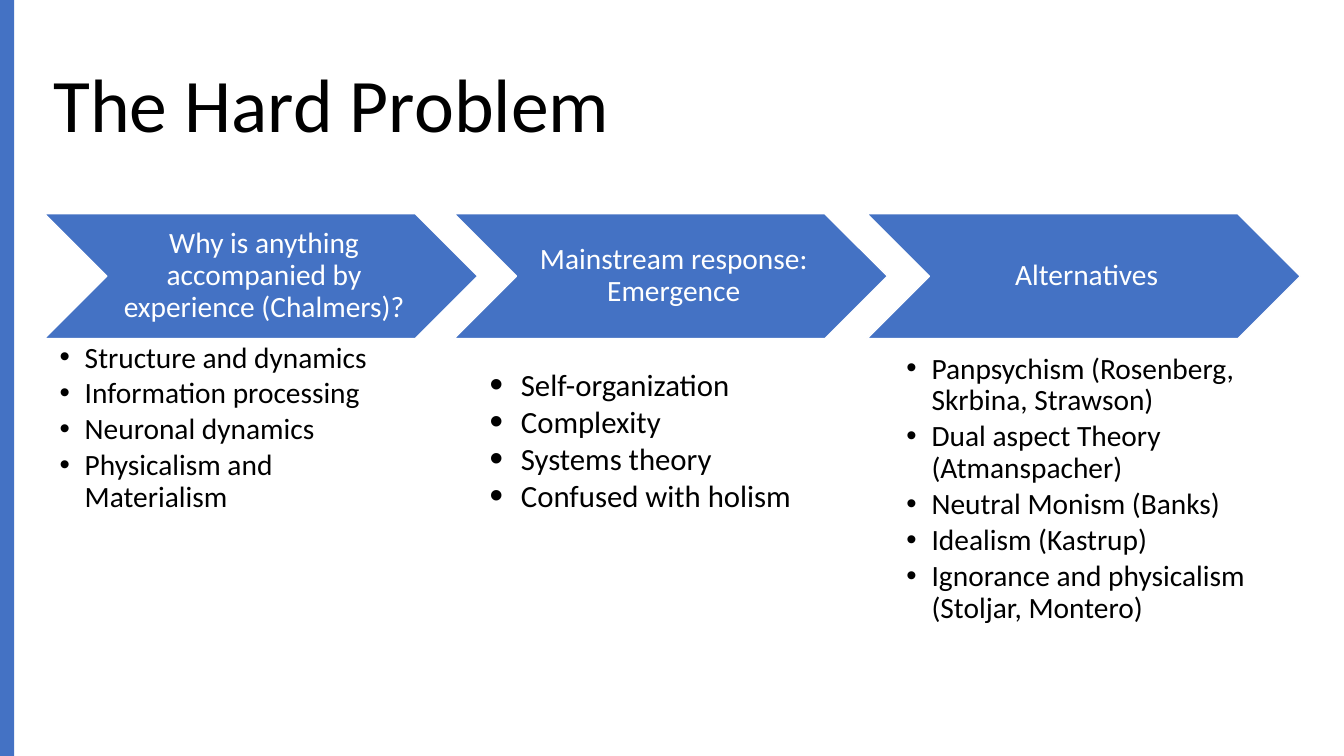
from dataclasses import dataclass

from lxml import etree
from pptx import Presentation
from pptx.dml.color import RGBColor
from pptx.enum import shapes, text
from pptx.oxml.ns import qn
from pptx.util import Inches, Pt

WIDTH, HEIGHT = Inches(13.33), Inches(7.5)
FONT = "Calibri"
BLUE, BLACK, WHITE = "4472C4", "000000", "FFFFFF"


@dataclass
class Box:
    """Left, top, width and height in percent of the slide."""
    left: float
    top: float
    width: float
    height: float

    def lengths(self) -> list[int]:
        return [int(WIDTH * self.left / 100), int(HEIGHT * self.top / 100),
                int(WIDTH * self.width / 100), int(HEIGHT * self.height / 100)]


@dataclass
class ListStyle:
    size: float
    indent: float
    inset: float
    line_spacing: float
    space_after: float
    bullet_percent: int
    wrap: bool


@dataclass
class Column:
    chevron_left: float
    heading: str
    list_box: Box
    style: ListStyle
    items: list[str]


STEP_LIST = ListStyle(21, 0.25, 0, 0.9, 3, 100, True)
FREE_LIST = ListStyle(22, 0.31, 0.1, 1.0, 0, 125, False)

COLUMNS = [
    Column(3.3, "Why is anything accompanied by experience (Chalmers)?",
           Box(4.43, 45.33, 25.8, 41.47), STEP_LIST,
           ["Structure and dynamics", "Information processing",
            "Neuronal dynamics", "Physicalism and Materialism"]),
    Column(33.78, "Mainstream response: Emergence",
           Box(35.7, 47.73, 24.23, 21.07), FREE_LIST,
           ["Self-organization", "Complexity", "Systems theory",
            "Confused with holism"]),
    Column(64.5, "Alternatives",
           Box(67.44, 46.8, 26.33, 41.47), STEP_LIST,
           ["Panpsychism (Rosenberg, Skrbina, Strawson)",
            "Dual aspect Theory (Atmanspacher)", "Neutral Monism (Banks)",
            "Idealism (Kastrup)",
            "Ignorance and physicalism (Stoljar, Montero)"]),
]


def color(value: str) -> RGBColor:
    return RGBColor.from_string(value)


def write(paragraph, words: str, size: float, font_color: str,
          line_spacing: float = 0.9) -> None:
    paragraph.text = words
    paragraph.line_spacing = line_spacing
    paragraph.font.name = FONT
    paragraph.font.size = Pt(size)
    paragraph.font.color.rgb = color(font_color)


def add_bullet(paragraph, style: ListStyle) -> None:
    properties = paragraph._p.get_or_add_pPr()
    indent = Inches(style.indent)
    properties.set("marL", str(indent))
    properties.set("indent", str(-indent))
    # Bullet elements stand before the default run properties
    bullet_parts = [("a:buSzPct", "val", str(style.bullet_percent * 1000)),
                    ("a:buFont", "typeface", "Arial"),
                    ("a:buChar", "char", "•")]
    for tag, name, value in bullet_parts:
        element = etree.Element(qn(tag))
        element.set(name, value)
        properties.find(qn("a:defRPr")).addprevious(element)


def add_filled(slide, kind: shapes.MSO_SHAPE, box: Box):
    shape = slide.shapes.add_shape(kind, *box.lengths())
    shape.shadow.inherit = False
    shape.fill.solid()
    shape.fill.fore_color.rgb = color(BLUE)
    shape.line.fill.background()
    return shape


def add_title(slide, words: str) -> None:
    frame = slide.shapes.add_textbox(
        *Box(3.23, 4.67, 93.62, 19.33).lengths()).text_frame
    frame.word_wrap = True
    frame.vertical_anchor = text.MSO_ANCHOR.MIDDLE
    write(frame.paragraphs[0], words, 54, BLACK)


def add_chevron(slide, column: Column) -> None:
    shape = add_filled(slide, shapes.MSO_SHAPE.CHEVRON,
                       Box(column.chevron_left, 28.27, 32.25, 16.53))
    shape.line.color.rgb = color(WHITE)
    shape.line.width = Pt(1)
    frame = shape.text_frame
    frame.word_wrap = True
    frame.vertical_anchor = text.MSO_ANCHOR.MIDDLE
    frame.margin_left = Inches(0.09)
    frame.margin_right = frame.margin_top = frame.margin_bottom = Inches(0.03)
    paragraph = frame.paragraphs[0]
    paragraph.alignment = text.PP_ALIGN.CENTER
    write(paragraph, column.heading, 21, WHITE)


def add_list(slide, column: Column) -> None:
    style = column.style
    frame = slide.shapes.add_textbox(*column.list_box.lengths()).text_frame
    frame.word_wrap = style.wrap
    frame.margin_left = frame.margin_right = Inches(style.inset)
    frame.margin_top = frame.margin_bottom = Inches(style.inset / 2)
    for index, item in enumerate(column.items):
        paragraph = frame.add_paragraph() if index else frame.paragraphs[0]
        write(paragraph, item, style.size, BLACK, style.line_spacing)
        paragraph.space_after = Pt(style.space_after)
        add_bullet(paragraph, style)


def main() -> None:
    presentation = Presentation()
    presentation.slide_width, presentation.slide_height = WIDTH, HEIGHT
    slide = presentation.slides.add_slide(presentation.slide_layouts[6])

    # Title and side bar
    add_title(slide, "The Hard Problem")
    add_filled(slide, shapes.MSO_SHAPE.RECTANGLE, Box(0, 0, 1.05, 100))

    # Chevrons with their lists
    for column in COLUMNS:
        add_chevron(slide, column)
        add_list(slide, column)

    presentation.save("out.pptx")


if __name__ == "__main__":
    main()
